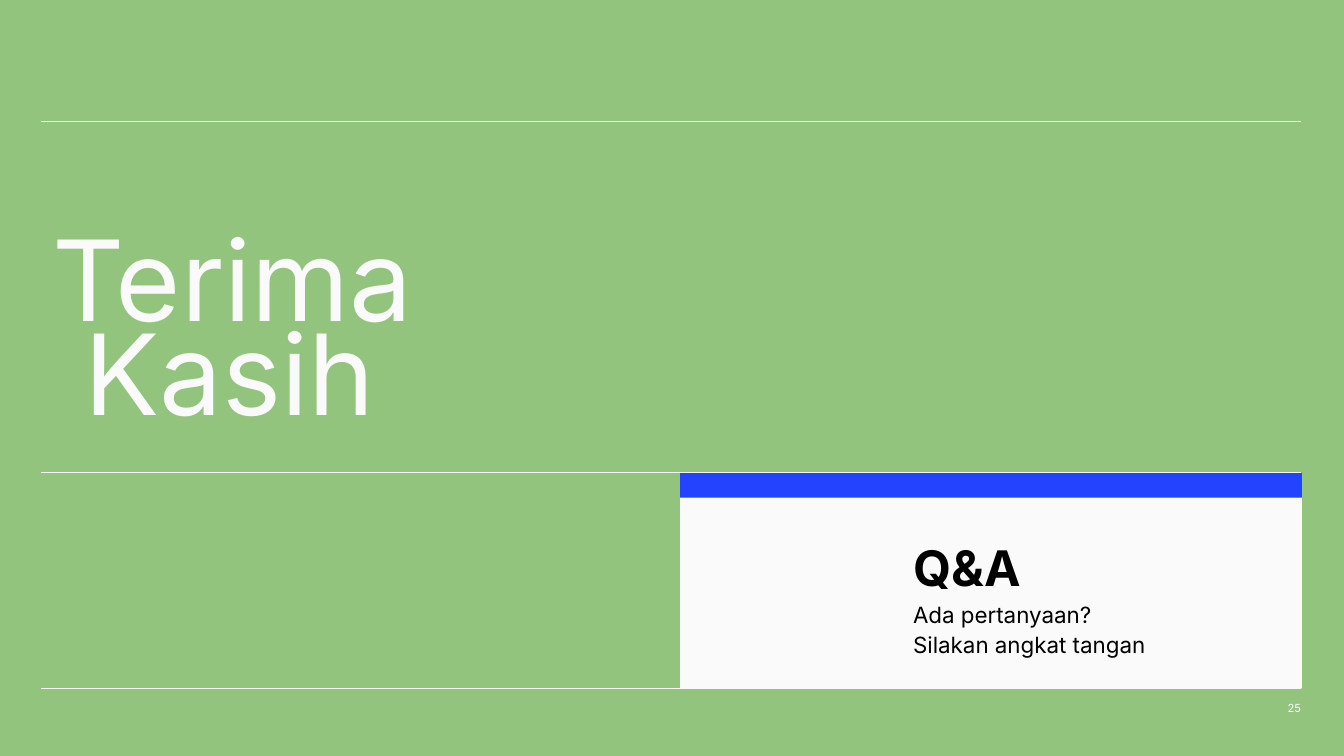
from dataclasses import dataclass

from lxml.etree import SubElement
from pptx import Presentation
from pptx.dml.color import RGBColor as Rgb
from pptx.enum.shapes import MSO_CONNECTOR as Link, MSO_SHAPE as Kind
from pptx.enum.text import MSO_ANCHOR as Anchor, MSO_AUTO_SIZE as Fit, PP_ALIGN as Align
from pptx.oxml.ns import qn
from pptx.util import Cm, Pt


@dataclass(frozen=True)
class Theme:
    font: str = "Inter"
    green: str = "93C47D"
    white: str = "FAFAFA"
    blue: str = "2443FF"
    black: str = "000000"
    huge: int = 80
    head: int = 35
    body: int = 16
    small: int = 8


THEME = Theme()
LEFT, RIGHT = 1.04, 32.79
TOP, MID, LOW = 3.07, 11.91, 17.35


def place(shape, box):
    shape.left, shape.top, shape.width, shape.height = map(Cm, box)


def write(shape, paras, size=THEME.body, color=THEME.black, align=Align.LEFT,
          anchor=Anchor.TOP, inset=0, spacing=1.0, indents=()):
    """Fill a shape; each paragraph is a list of lines, each (text, size, bold) or text."""
    frame = shape.text_frame
    frame.word_wrap = True
    frame.auto_size = Fit.NONE
    frame.vertical_anchor = anchor
    frame.margin_left = 0
    frame.margin_top = frame.margin_right = frame.margin_bottom = Cm(inset)
    for i, lines in enumerate(paras):
        para = frame.add_paragraph() if i else frame.paragraphs[0]
        props = para._p.get_or_add_pPr()
        props.set("marL", str(Cm(indents[i] if indents else 0)))
        props.set("indent", "0")
        SubElement(props, qn("a:buNone"))
        para.alignment = align
        para.line_spacing = spacing
        para.space_before = para.space_after = Pt(0)
        for j, line in enumerate(lines):
            text, points, bold = (line, size, False) if isinstance(line, str) else line
            if j:
                para.add_line_break()
            run = para.add_run()
            run.text = text
            font = run.font
            font.name, font.size, font.bold = THEME.font, Pt(points), bold
            font.color.rgb = Rgb.from_string(color)


def rule(slide, y):
    line = slide.shapes.add_connector(Link.STRAIGHT, Cm(LEFT), Cm(y), Cm(RIGHT), Cm(y))
    line.line.color.rgb = Rgb.from_string(THEME.white)
    line.line.width = Pt(0.75)
    SubElement(line._element.spPr, qn("a:effectLst"))


def block(slide, box, color):
    shape = slide.shapes.add_shape(Kind.RECTANGLE, *map(Cm, box))
    shape.shadow.inherit = False
    shape.fill.solid()
    shape.fill.fore_color.rgb = Rgb.from_string(color)
    shape.line.fill.background()


def card(slide, box):
    x, y, w, h = box
    block(slide, box, THEME.white)
    block(slide, (x, y, w, 0.63), THEME.blue)
    note = slide.placeholders[1]
    # Bring the text in front of the card
    slide.shapes._spTree.append(note._element)
    place(note, (x + 5.87, y + 1.42, 8.84, 2.97))
    write(note, [[("Q&A", THEME.head, True), "Ada pertanyaan?"],
                 ["Silakan angkat tangan"]], spacing=1.15)


def title(slide, box):
    shape = slide.shapes.title
    place(shape, box)
    write(shape, [["Terima"], ["Kasih"]], size=THEME.huge, color=THEME.white,
          inset=0.33, spacing=0.7, indents=(0, 0.8))


def number(slide, box):
    shape = slide.shapes.add_textbox(*map(Cm, box))
    write(shape, [["25"]], size=THEME.small, color=THEME.white,
          align=Align.RIGHT, anchor=Anchor.MIDDLE)


def closing(deck):
    slide = deck.slides.add_slide(deck.slide_layouts[0])
    fill = slide.background.fill
    fill.solid()
    fill.fore_color.rgb = Rgb.from_string(THEME.green)
    rule(slide, LOW)
    card(slide, (17.14, MID, RIGHT + 0.02 - 17.14, LOW - MID))
    rule(slide, MID)
    rule(slide, TOP)
    title(slide, (1.32, 5.87, 23.93, 4.57))
    number(slide, (RIGHT - 2.03, LOW + 0.35, 2.03, 0.28))


def main():
    deck = Presentation()
    deck.slide_width, deck.slide_height = Cm(33.87), Cm(19.05)
    closing(deck)
    deck.save("out.pptx")


if __name__ == "__main__":
    main()
